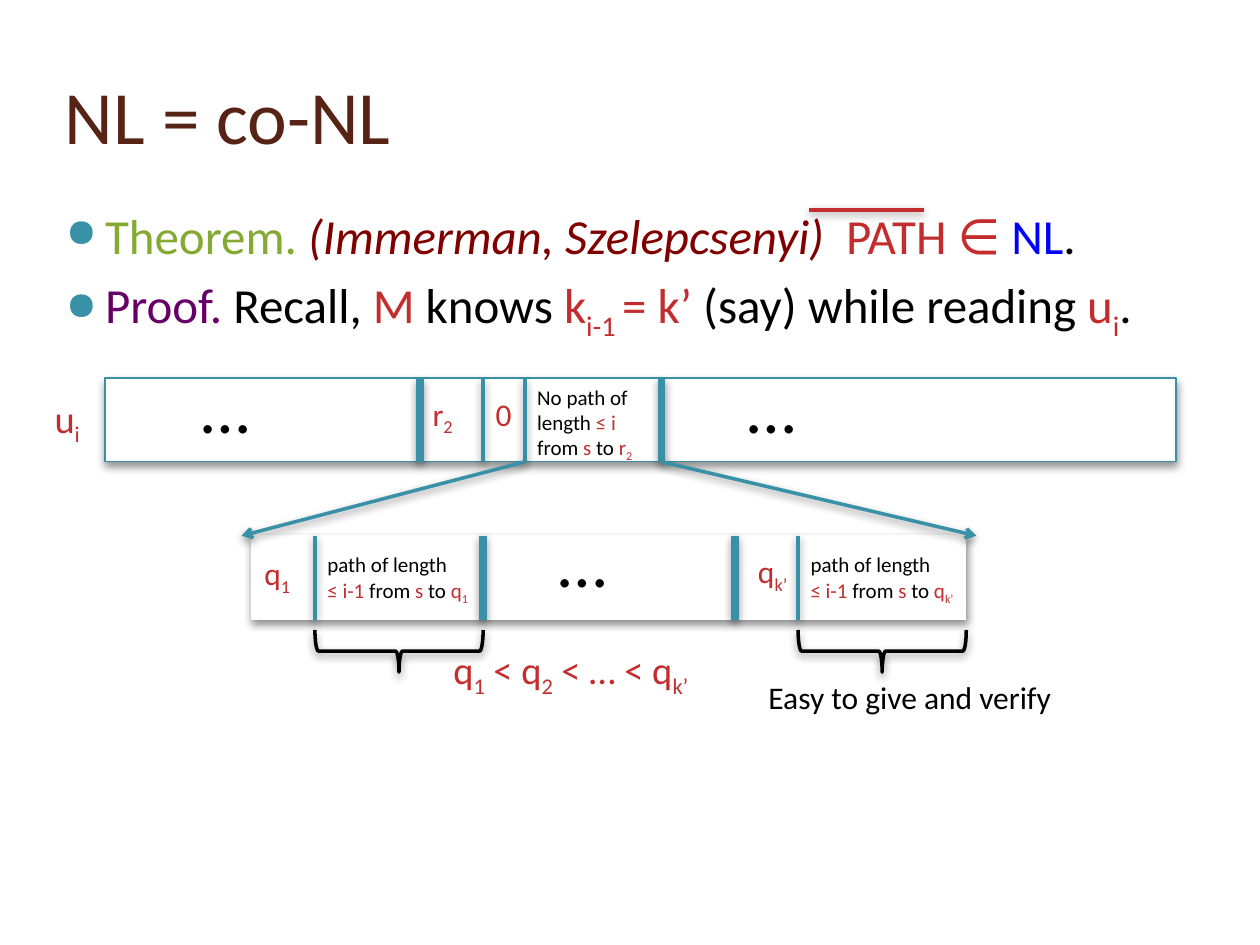
from lxml.etree import SubElement
from pptx import Presentation
from pptx.dml.color import RGBColor
from pptx.enum.shapes import MSO_CONNECTOR, MSO_SHAPE
from pptx.enum.text import MSO_ANCHOR, PP_ALIGN
from pptx.oxml.ns import qn
from pptx.util import Cm, Pt

TEAL, RED, BLACK, WHITE = "3891A7", "C32D2E", "000000", "FFFFFF"
BROWN, GREEN, MAROON, BLUE, PURPLE = "572314", "84AA33", "800000", "0000FF", "660066"
SUB = "sub"
ITALIC = "italic"


def color(value):
    return RGBColor.from_string(value)


class SlideBuilder:
    font = "Calibri"

    def __init__(self, slide):
        self.slide = slide

    def shadow(self, shape):
        properties = shape._element.spPr
        for old in properties.findall(qn("a:effectLst")):
            properties.remove(old)
        effects = SubElement(properties, qn("a:effectLst"))
        outer = SubElement(effects, qn("a:outerShdw"), blurRad=str(Pt(5)),
                           dist=str(Pt(2)), dir="5400000", rotWithShape="0")
        tint = SubElement(outer, qn("a:srgbClr"), val=BLACK)
        SubElement(tint, qn("a:alpha"), val="43000")

    def text(self, left, top, width, height, size, *lines, anchor=MSO_ANCHOR.TOP):
        shape = self.slide.shapes.add_textbox(Cm(left), Cm(top), Cm(width), Cm(height))
        frame = shape.text_frame
        frame.word_wrap = True
        frame.vertical_anchor = anchor
        for index, pieces in enumerate(lines):
            paragraph = frame.add_paragraph() if index else frame.paragraphs[0]
            paragraph.font.size = Pt(size)
            paragraph.font.name = self.font
            for content, shade, *style in pieces:
                run = paragraph.add_run()
                run.text = content
                run.font.color.rgb = color(shade)
                if ITALIC in style:
                    run.font.italic = True
                if SUB in style:
                    run.font._element.set("baseline", "-25000")
        return frame

    def bullets(self, left, top, width, height, size, *lines):
        frame = self.text(left, top, width, height, size, *lines)
        for paragraph in frame.paragraphs:
            paragraph.alignment = PP_ALIGN.JUSTIFY
            paragraph.space_before = Pt(6)
            properties = paragraph._p.get_or_add_pPr()
            properties.set("marL", str(Cm(1.02)))
            properties.set("indent", str(Cm(-0.79)))
            marks = [SubElement(properties, qn("a:buClr")),
                     SubElement(properties, qn("a:buSzPct"), val="80000"),
                     SubElement(properties, qn("a:buChar"), char="●")]
            SubElement(marks[0], qn("a:srgbClr"), val=TEAL)
            defaults = properties.find(qn("a:defRPr"))
            for mark in marks:
                defaults.addprevious(mark)

    def line(self, x1, y1, x2, y2, shade=TEAL, weight=2, arrow=False):
        connector = self.slide.shapes.add_connector(
            MSO_CONNECTOR.STRAIGHT, Cm(x1), Cm(y1), Cm(x2), Cm(y2))
        connector.line.color.rgb = color(shade)
        connector.line.width = Pt(weight)
        if arrow:
            SubElement(connector.line._get_or_add_ln(), qn("a:tailEnd"), type="arrow")
        self.shadow(connector)

    def shape(self, kind, left, top, width, height, outline, weight, fill=None):
        shape = self.slide.shapes.add_shape(kind, Cm(left), Cm(top), Cm(width), Cm(height))
        if fill:
            shape.fill.solid()
            shape.fill.fore_color.rgb = color(fill)
        else:
            shape.fill.background()
        shape.line.color.rgb = color(outline)
        shape.line.width = Pt(weight)
        self.shadow(shape)
        return shape

    def tape(self, left, top, width, height, outline, thin, thick):
        self.shape(MSO_SHAPE.RECTANGLE, left, top, width, height, outline, 0.75, WHITE)
        for positions, weight in ((thin, 2), (thick, 4.25)):
            for x in positions:
                self.line(x, top, x, top + height, weight=weight)

    def brace(self, left, top, span, depth):
        inset = (span - depth) / 2
        brace = self.shape(MSO_SHAPE.LEFT_BRACE, left + inset, top - inset,
                           depth, span, BLACK, 2)
        brace.rotation = 270


def main():
    presentation = Presentation()
    presentation.slide_width, presentation.slide_height = Cm(25.4), Cm(19.05)
    builder = SlideBuilder(presentation.slides.add_slide(presentation.slide_layouts[6]))

    builder.text(1.06, 0.85, 22.44, 2.92, 43, [("NL = co-NL", BROWN)],
                 anchor=MSO_ANCHOR.MIDDLE)
    builder.bullets(
        0.85, 4.02, 23.28, 14.8, 28,
        [("Theorem. ", GREEN), ("(Immerman, Szelepcsenyi)  ", MAROON, ITALIC),
         ("PATH ∈ ", RED), ("NL", BLUE), (".", BLACK)],
        [("Proof.", PURPLE), (" Recall, ", BLACK), ("M", RED), (" knows ", BLACK),
         ("k", RED), ("i-1 ", RED, SUB), ("= k’ ", RED),
         ("(say) while reading ", BLACK), ("u", RED), ("i", RED, SUB), (".", BLACK)])
    builder.line(16.3, 4.23, 18.63, 4.23, RED)

    upper, lower, height = 7.62, 10.8, 1.69
    builder.tape(2.12, upper, 21.59, height, TEAL, (9.74, 10.58), (8.47, 13.34))
    builder.tape(5.08, lower, 14.39, height, WHITE, (6.35, 16.09), (9.74, 14.82))
    for start, end in ((10.58, 4.87), (13.34, 19.68)):
        builder.line(start, upper + height, end, lower, arrow=True)
    for left, top in ((3.81, 7.2), (14.82, 7.2), (11, 10.31)):
        builder.text(left, top, 3.6, 1.96, 40, [("…", BLACK)])

    builder.text(0.85, 7.83, 1.27, 1.19, 22, [("u", RED), ("i", RED, SUB)])
    builder.text(8.47, 7.83, 1.48, 1.02, 18, [("r", RED), ("2", RED, SUB)])
    builder.text(9.74, 7.83, 1.06, 1.02, 18, [("0", RED)])
    builder.text(10.58, upper, 2.75, 1.8, 12,
                 [("No path of length ", BLACK), ("≤ i", RED)],
                 [("from ", BLACK), ("s", RED), (" to ", BLACK), ("r", RED), ("2", RED, SUB)])

    for name_left, name_top, left, index in ((5.08, 11.05, 6.35, "1"),
                                             (15.03, 11, 16.09, "k’")):
        vertex = [("q", RED), (index, RED, SUB)]
        builder.text(name_left, name_top, 1.48, 1.02, 18, vertex)
        builder.text(left, 11, 3.81, 1.27, 12, [("path of length", BLACK)],
                     [("≤ i-1", RED), (" from ", BLACK), ("s", RED), (" to ", BLACK), *vertex])
        builder.brace(left, 12.7, 3.39, 0.85)

    builder.text(8.89, 12.9, 9.31, 1.19, 22,
                 [("q", RED), ("1", RED, SUB), (" < q", RED), ("2", RED, SUB),
                  (" < … < q", RED), ("k’", RED, SUB)])
    builder.text(15.24, 13.55, 6.77, 1.02, 18, [("Easy to give and verify", BLACK)])

    presentation.save("out.pptx")


if __name__ == "__main__":
    main()
